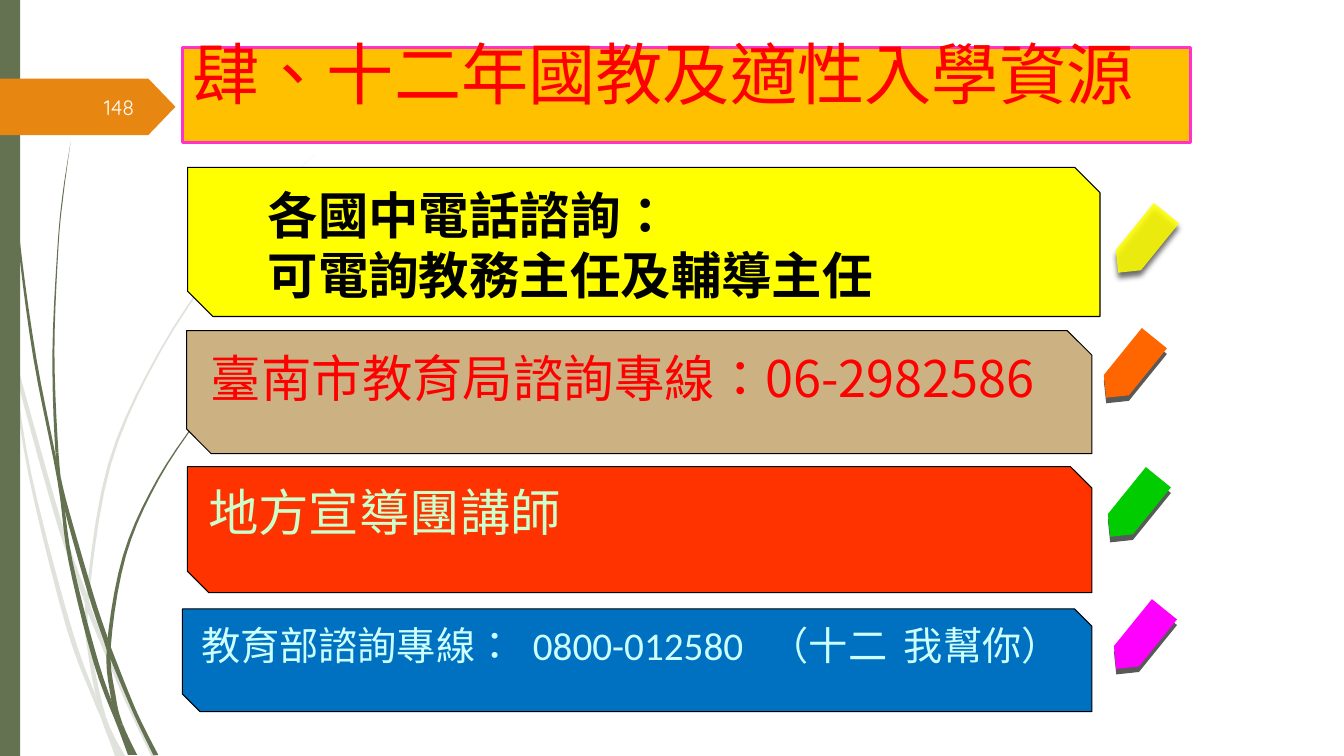
"""Build the slide on twelve-year education and admission resources."""
import pptx
import pptx.util
import pptx.dml.color
import pptx.enum.lang
import pptx.enum.shapes
import pptx.enum.text
import pptx.oxml
import pptx.oxml.ns

Inches, Pt = pptx.util.Inches, pptx.util.Pt
RGB = pptx.dml.color.RGBColor.from_string
MSO = pptx.enum.shapes.MSO_SHAPE
ALIGN = pptx.enum.text.PP_ALIGN
ANCHOR = pptx.enum.text.MSO_ANCHOR
qn = pptx.oxml.ns.qn
NS = pptx.oxml.ns.nsdecls("a")

THEME = {
    "grass": "647252", "pale_grass": "E0E3DC", "arrow": "E78712", "number": "FEFFFF",
    "banner": "FFC000", "banner_edge": "FF33CC", "red": "FF0000", "black": "000000",
    "yellow": "FFFF00", "tan": "CCB182", "scarlet": "FF3300", "blue": "0070C0",
    "mint": "CCFFCC", "ice": "CCFFFF", "orange": "FF6600", "green": "00CC00",
    "magenta": "FF00FF", "shadow": "595959",
    "cjk": "Noto Sans CJK SC", "latin": "Calibri", "digits": "Quicksand",
    "title_size": 48, "panel_size": 36, "hotline_size": 28, "number_size": 15,
}


def paint(shape, fill, edge=None, width=0.75):
    shape.shadow.inherit = False
    shape.fill.solid()
    shape.fill.fore_color.rgb = RGB(THEME[fill])
    if edge:
        shape.line.color.rgb = RGB(THEME[edge])
        shape.line.width = Pt(width)
    else:
        shape.line.fill.background()


def style(paragraph, size, color, latin, spacing=None, bold=False):
    paragraph.alignment = ALIGN.LEFT
    paragraph.line_spacing = spacing
    for run in paragraph.runs:
        run.font.size = Pt(THEME[size])
        run.font.bold = bold
        run.font.color.rgb = RGB(THEME[color])
        run.font.name = THEME[latin]
        run.font.language_id = pptx.enum.lang.MSO_LANGUAGE_ID.TRADITIONAL_CHINESE
        east_asian = pptx.oxml.parse_xml(f'<a:ea {NS} typeface="{THEME["cjk"]}"/>')
        run._r.get_or_add_rPr().find(qn("a:latin")).addnext(east_asian)


deck = pptx.Presentation()
deck.slide_width, deck.slide_height = Inches(13.33), Inches(7.5)
slide = deck.slides.add_slide(deck.slide_layouts[5])
shapes = slide.shapes

BLADES = [
    ("pale_grass", (3.5, 7.14),
     [(2.82, 0, 0), (3.22, 0.05, 0.08), (3.5, 0.1, 0.12), (4.7, 0.28, 0.31), (6.2, 0.65, 0.7),
      (6.93, 0.92, 0.96), (7.14, 1.01, 1.05), (7.5, 1.14, 1.2)]),
    ("pale_grass", (5.92, 6.1),
     [(3.45, 0.14, 0.14), (3.76, 0.17, 0.21), (5.21, 0.57, 0.62), (5.92, 0.82, 0.87),
      (6.1, 0.88, 0.93), (6.93, 1.23, 1.27), (7.5, 1.5, 1.55)]),
    ("pale_grass", (5.96, 7.11),
     [(1.53, 3.12, 3.12), (1.97, 2.68, 2.69), (2.45, 2.27, 2.29), (3.48, 1.58, 1.6),
      (4.61, 1.07, 1.1), (5.96, 0.85, 0.88), (6.46, 0.87, 0.91), (7.11, 1.0, 1.05),
      (7.5, 1.16, 1.24)]),
    ("grass", (4.77, 7.22),
     [(0, 0.03, 0.03), (0.48, 0.03, 0.05), (1.1, 0.07, 0.08), (2.33, 0.17, 0.19),
      (3.55, 0.33, 0.36), (4.77, 0.57, 0.6), (5.57, 0.68, 0.72), (6.58, 0.93, 0.98),
      (7.22, 1.17, 1.21), (7.49, 1.27, 1.33)]),
    ("grass", (6.33, 6.5),
     [(4.72, 0.6, 0.6), (5.05, 0.64, 0.68), (5.91, 0.88, 0.93), (6.33, 1.02, 1.07),
      (6.5, 1.08, 1.13), (7.07, 1.32, 1.36), (7.49, 1.52, 1.57)]),
    ("grass", (4.49,),
     [(1.41, 0.7, 0.7), (1.93, 0.62, 0.63), (2.45, 0.57, 0.58), (3.49, 0.52, 0.54),
      (4.49, 0.55, 0.58), (5.05, 0.63, 0.64)]),
    ("grass", (6.41, 7.19),
     [(3.44, 2.6, 2.61), (3.74, 2.31, 2.32), (4.05, 2.04, 2.05), (4.75, 1.56, 1.58),
      (5.51, 1.22, 1.25), (6.41, 1.06, 1.1), (6.92, 1.1, 1.15), (7.19, 1.17, 1.22),
      (7.49, 1.28, 1.36)]),
]
STEPS = 5
for color, joints, rows in BLADES:
    smooth = []
    for i in range(len(rows) - 1):
        four = rows[max(i - 1, 0)], rows[i], rows[i + 1], rows[min(i + 2, len(rows) - 1)]
        for t in (step / STEPS for step in range(STEPS)):
            smooth.append([b + t / 2 * (c - a + t * (2 * a - 5 * b + 4 * c - d + t * (3 * (b - c) + d - a)))
                           for a, b, c, d in zip(*four)])
    smooth.append(rows[-1])
    heights = [row[0] for row in rows]
    cuts = [0, *(heights.index(joint) * STEPS for joint in joints), len(smooth) - 1]
    for first, last in zip(cuts, cuts[1:]):
        section = smooth[first:last + 1]
        outline = [(Inches(left), Inches(y)) for y, left, right in section]
        outline += [(Inches(right), Inches(y)) for y, left, right in reversed(section)]
        blade = shapes.build_freeform(*outline[0])
        blade.add_line_segments(outline[1:], close=True)
        paint(blade.convert_to_shape(), color)

side_bar = shapes.add_shape(MSO.RECTANGLE, 0, 0, Inches(0.2), Inches(7.5))
paint(side_bar, "grass")
number_arrow = shapes.add_shape(MSO.PENTAGON, *map(Inches, (-0.01, 0.78, 1.75, 0.56)))
number_arrow.adjustments[0] = 0.48
paint(number_arrow, "arrow")

title = shapes.title
title.left, title.top, title.width, title.height = map(Inches, (1.81, 0.47, 10, 0.94))
paint(title, "banner", "banner_edge", 2)
title.text_frame.text = "肆、十二年國教及適性入學資源"
title.text_frame.auto_size = pptx.enum.text.MSO_AUTO_SIZE.NONE
title.text_frame.vertical_anchor = ANCHOR.MIDDLE
title.text_frame.margin_top = title.text_frame.margin_bottom = Inches(0.05)
style(title.text_frame.paragraphs[0], "title_size", "red", "cjk", Pt(26))

PANELS = [
    ("各國中電話諮詢：\n可電詢教務主任及輔導主任", (1.86, 1.66, 9.05, 1.48), "yellow",
     "black", "panel_size", "latin", 0.67, 0.17, []),
    ("臺南市教育局諮詢專線：06-2982586", (1.85, 3.28, 8.98, 1.22), "tan",
     "red", "panel_size", "cjk", 0.12, 0.2, []),
    ("地方宣導團講師", (1.86, 4.63, 8.97, 1.25), "scarlet",
     "mint", "panel_size", "cjk", 0.1, 0.17, []),
    ("教育部諮詢專線：\t0800-012580\t（十二\t我幫你）", (1.81, 6.04, 9.02, 1.02), "blue",
     "ice", "hotline_size", "latin", 0.1, 0.17, [3.29, 5.64, 6.97]),
]
for wording, place, fill, ink, size, latin, indent, snip, stops in PANELS:
    panel = shapes.add_shape(MSO.SNIP_2_DIAG_RECTANGLE, *map(Inches, place))
    panel.adjustments[1] = snip
    paint(panel, fill, "black")
    frame = panel.text_frame
    frame.text = wording
    frame.word_wrap = True
    frame.vertical_anchor = ANCHOR.TOP
    frame.margin_left, frame.margin_top = Inches(indent), Inches(0.04)
    for paragraph in frame.paragraphs:
        style(paragraph, size, ink, latin, Pt(THEME[size] * 1.2), bold=fill == "yellow")
        if stops:
            tabs = "".join(f'<a:tab pos="{Inches(stop)}" algn="l"/>' for stop in stops)
            paragraph._p.get_or_add_pPr().append(
                pptx.oxml.parse_xml(f"<a:tabLst {NS}>{tabs}</a:tabLst>"))

PENCILS = [("yellow", 10.95, 2.25, 4), ("orange", 10.83, 3.49, 0),
           ("green", 10.87, 4.87, 0), ("magenta", 10.93, 6.18, 0)]
for color, left, top, blur in PENCILS:
    pencil = shapes.add_shape(MSO.PENTAGON, *map(Inches, (left, top, 0.76, 0.32)))
    pencil.rotation = 129
    paint(pencil, color)
    pencil._element.spPr.find(qn("a:effectLst")).append(pptx.oxml.parse_xml(
        f'<a:outerShdw {NS} blurRad="{Pt(blur)}" dist="{Pt(4)}" dir="5400000" rotWithShape="0">'
        f'<a:srgbClr val="{THEME["shadow"]}"/></a:outerShdw>'))
    if color == "yellow":
        tint = pencil._element.spPr.find(qn("a:solidFill")).find(qn("a:srgbClr"))
        tint.append(pptx.oxml.parse_xml(f'<a:alpha {NS} val="86000"/>'))

page_number = shapes.add_textbox(*map(Inches, (0.58, 0.86, 0.85, 0.4))).text_frame
page_number.text = "148"
page_number.word_wrap = True
page_number.vertical_anchor = ANCHOR.MIDDLE
style(page_number.paragraphs[0], "number_size", "number", "digits")
page_number.paragraphs[0].alignment = ALIGN.RIGHT

deck.save("out.pptx")
